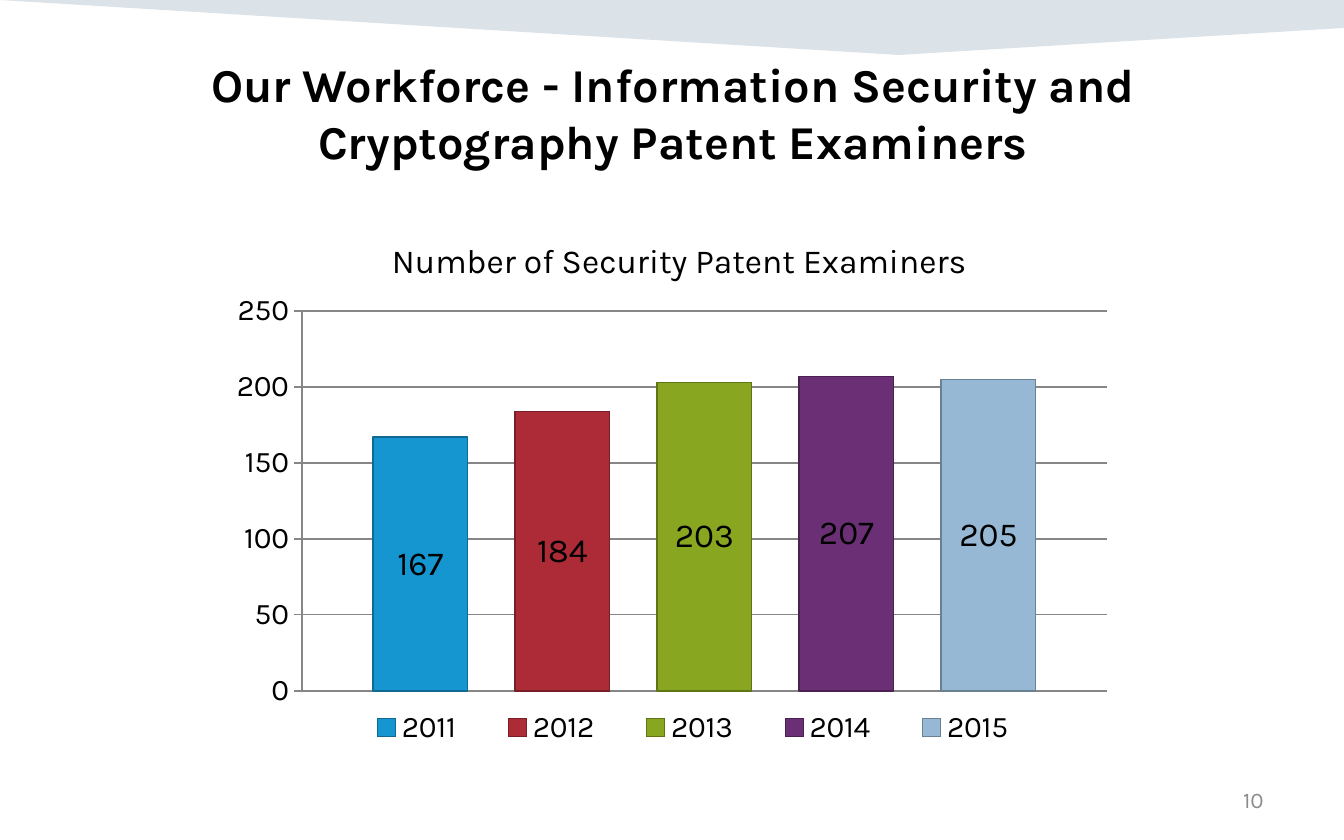
from lxml import etree
from pptx import Presentation
from pptx.chart.data import CategoryChartData
from pptx.dml.color import RGBColor
from pptx.enum.chart import (XL_CHART_TYPE, XL_LABEL_POSITION,
                             XL_LEGEND_POSITION, XL_TICK_MARK)
from pptx.enum.text import MSO_ANCHOR, MSO_AUTO_SIZE, PP_ALIGN
from pptx.oxml.ns import qn
from pptx.util import Pt

COLUMNS = XL_CHART_TYPE.COLUMN_CLUSTERED
LABEL_CENTER = XL_LABEL_POSITION.CENTER
LEGEND_BOTTOM = XL_LEGEND_POSITION.BOTTOM
TICK_OUTSIDE = XL_TICK_MARK.OUTSIDE
MIDDLE = MSO_ANCHOR.MIDDLE
NO_AUTOFIT = MSO_AUTO_SIZE.NONE
CENTER, RIGHT = PP_ALIGN.CENTER, PP_ALIGN.RIGHT

BLACK = RGBColor(0x00, 0x00, 0x00)
GRAY = RGBColor(0x8C, 0x8C, 0x8C)
RULE_GRAY = RGBColor(0x86, 0x86, 0x86)
NAVY = RGBColor(0x16, 0x44, 0x69)
BLUE = RGBColor(0x15, 0x96, 0xD1)
RED = RGBColor(0xAC, 0x2B, 0x37)
GREEN = RGBColor(0x88, 0xA6, 0x20)
PURPLE = RGBColor(0x6B, 0x2F, 0x75)
LIGHT_BLUE = RGBColor(0x97, 0xB8, 0xD4)

EMU_PER_PX = 914400 / 134.4
WIDTH, HEIGHT = 1344, 840
TITLE_ONLY = 5

EXAMINERS = [("2011", 167, BLUE), ("2012", 184, RED), ("2013", 203, GREEN),
             ("2014", 207, PURPLE), ("2015", 205, LIGHT_BLUE)]


def px(length):
    return round(length * EMU_PER_PX)


def darker(color):
    return RGBColor(*(round(channel * 0.7) for channel in color))


def place_part(part, index, frame, bounds, inner=False):
    """Fix a chart part at bounds (px on the page) inside the chart frame."""
    layout = part.find(qn("c:layout"))
    if layout is None:
        layout = etree.Element(qn("c:layout"))
        part.insert(index, layout)
    manual = etree.SubElement(layout, qn("c:manualLayout"))
    left, top, width, height = frame
    x, y, *size = bounds
    settings = [("layoutTarget", "inner")] if inner else []
    settings += [("xMode", "edge"), ("yMode", "edge"),
                 ("x", (x - left) / width), ("y", (y - top) / height)]
    if size:
        settings += [("w", size[0] / width), ("h", size[1] / height)]
    for name, value in settings:
        text = value if isinstance(value, str) else f"{value:.4f}"
        etree.SubElement(manual, qn(f"c:{name}")).set("val", text)


class SlideBuilder:
    def __init__(self, deck, font_name):
        self.page = deck.slides.add_slide(deck.slide_layouts[TITLE_ONLY])
        self.font_name = font_name

    def style(self, font, size, color=BLACK, bold=False):
        font.name, font.size, font.bold = self.font_name, Pt(size), bold
        font.color.rgb = color

    def band(self, points, color, opacity):
        """Draw a translucent polygon behind everything else."""
        builder = self.page.shapes.build_freeform(*points[0], scale=EMU_PER_PX)
        builder.add_line_segments(points[1:], close=True)
        shape = builder.convert_to_shape()
        shape.shadow.inherit = False
        shape.fill.solid()
        shape.fill.fore_color.rgb = color
        shape.line.fill.background()
        rgb = shape._element.spPr.find(".//" + qn("a:srgbClr"))
        etree.SubElement(rgb, qn("a:alpha")).set("val", str(opacity * 1000))
        self.page.shapes._spTree.insert(2, shape._element)

    def fill_text(self, box, text, align, size, color, bold=False):
        frame = box.text_frame
        frame.text = text
        frame.word_wrap = True
        frame.auto_size = NO_AUTOFIT
        frame.vertical_anchor = MIDDLE
        para = frame.paragraphs[0]
        para.alignment = align
        self.style(para.font, size, color, bold)

    def title(self, text, left, top, width, height):
        box = self.page.shapes.title
        box.left, box.top = px(left), px(top)
        box.width, box.height = px(width), px(height)
        self.fill_text(box, text, CENTER, 25.2, BLACK, bold=True)

    def page_number(self, text, *bounds):
        box = self.page.shapes.add_textbox(*map(px, bounds))
        self.fill_text(box, text, RIGHT, 12, GRAY)

    def column_chart(self, heading, rows, frame, heading_at, plot_at, legend_at):
        data = CategoryChartData()
        data.categories = ["1"]
        for name, value, _ in rows:
            data.add_series(name, [value])
        chart = self.page.shapes.add_chart(COLUMNS, *map(px, frame), data).chart
        self.style(chart.font, 18)

        chart.has_title = True
        chart.chart_title.text_frame.text = heading
        self.style(chart.chart_title.text_frame.paragraphs[0].font, 18)
        place_part(chart.chart_title._element, 1, frame, heading_at)

        chart.has_legend = True
        chart.legend.position = LEGEND_BOTTOM
        chart.legend.include_in_layout = False
        self.style(chart.legend.font, 16)
        place_part(chart.legend._element, 1, frame, legend_at)

        chart.category_axis.visible = False
        axis = chart.value_axis
        axis.minimum_scale, axis.maximum_scale, axis.major_unit = 0, 250, 50
        axis.major_tick_mark = TICK_OUTSIDE
        self.style(axis.tick_labels.font, 16)
        for line in (axis.format.line, axis.major_gridlines.format.line):
            line.color.rgb = RULE_GRAY
            line.width = Pt(0.75)

        plot = chart.plots[0]
        plot.gap_width, plot.overlap = 150, -50
        plot.vary_by_categories = False
        for series, (_, _, color) in zip(plot.series, rows):
            series.format.fill.solid()
            series.format.fill.fore_color.rgb = color
            series.format.line.color.rgb = darker(color)
            series.format.line.width = Pt(0.75)
            labels = series.data_labels
            labels.show_value = True
            labels.position = LABEL_CENTER
            self.style(labels.font, 18)
        plot_area = chart._chartSpace.find(".//" + qn("c:plotArea"))
        place_part(plot_area, 0, frame, plot_at, inner=True)


def main():
    deck = Presentation()
    deck.slide_width, deck.slide_height = px(WIDTH), px(HEIGHT)
    slide = SlideBuilder(deck, "Karla")
    slide.band([(0, 0), (WIDTH, 0), (WIDTH, 28), (899, 55)], NAVY, 15)
    slide.title("Our Workforce - Information Security and Cryptography "
                "Patent Examiners", 148, 47, 1050, 130)
    slide.column_chart("Number of Security Patent Examiners", EXAMINERS,
                       frame=(219, 206, 906, 570), heading_at=(386, 233),
                       plot_at=(302, 311, 805, 380),
                       legend_at=(335, 708, 716, 40))
    slide.page_number("10", 964, 778, 313, 44)
    deck.save("out.pptx")


if __name__ == "__main__":
    main()
